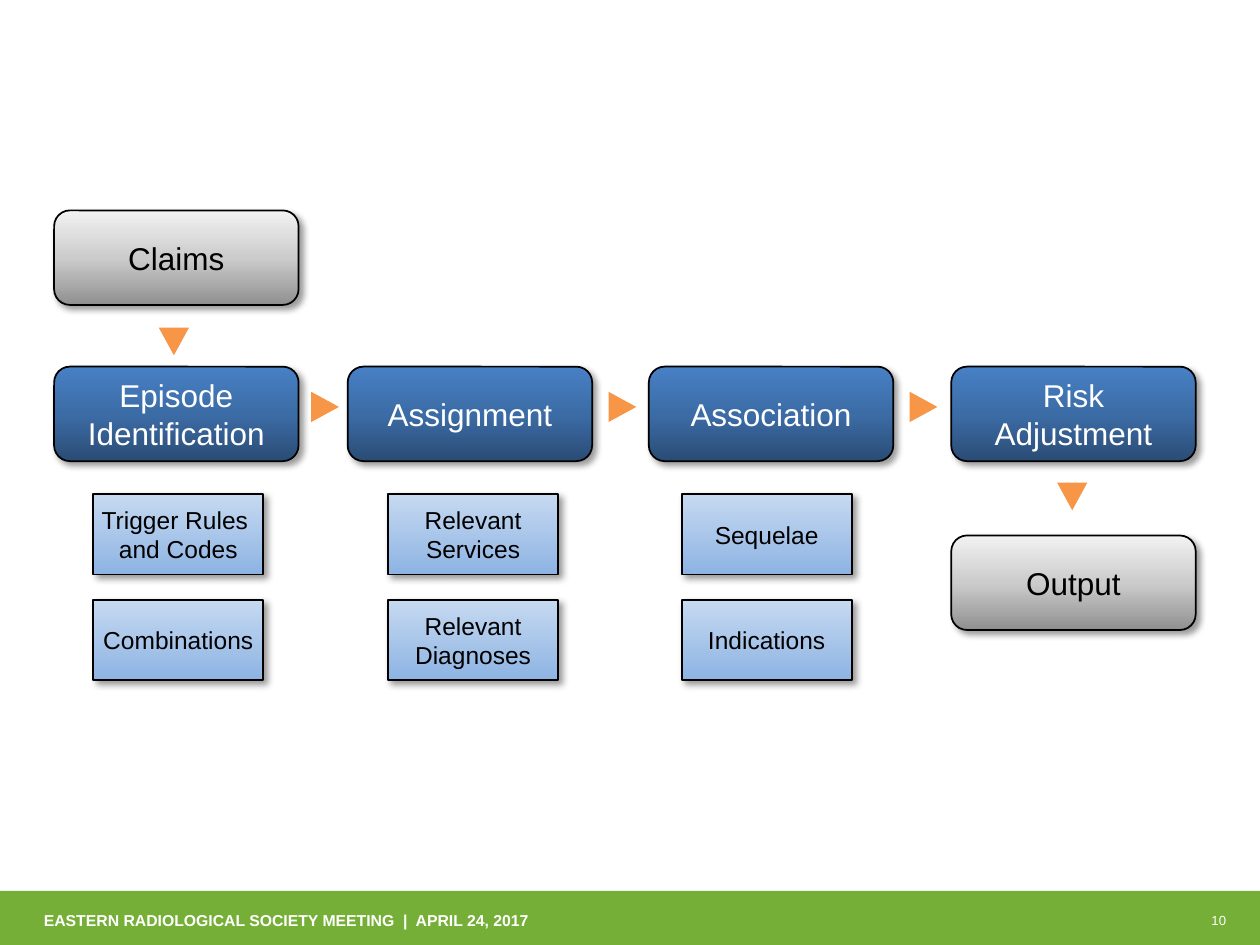
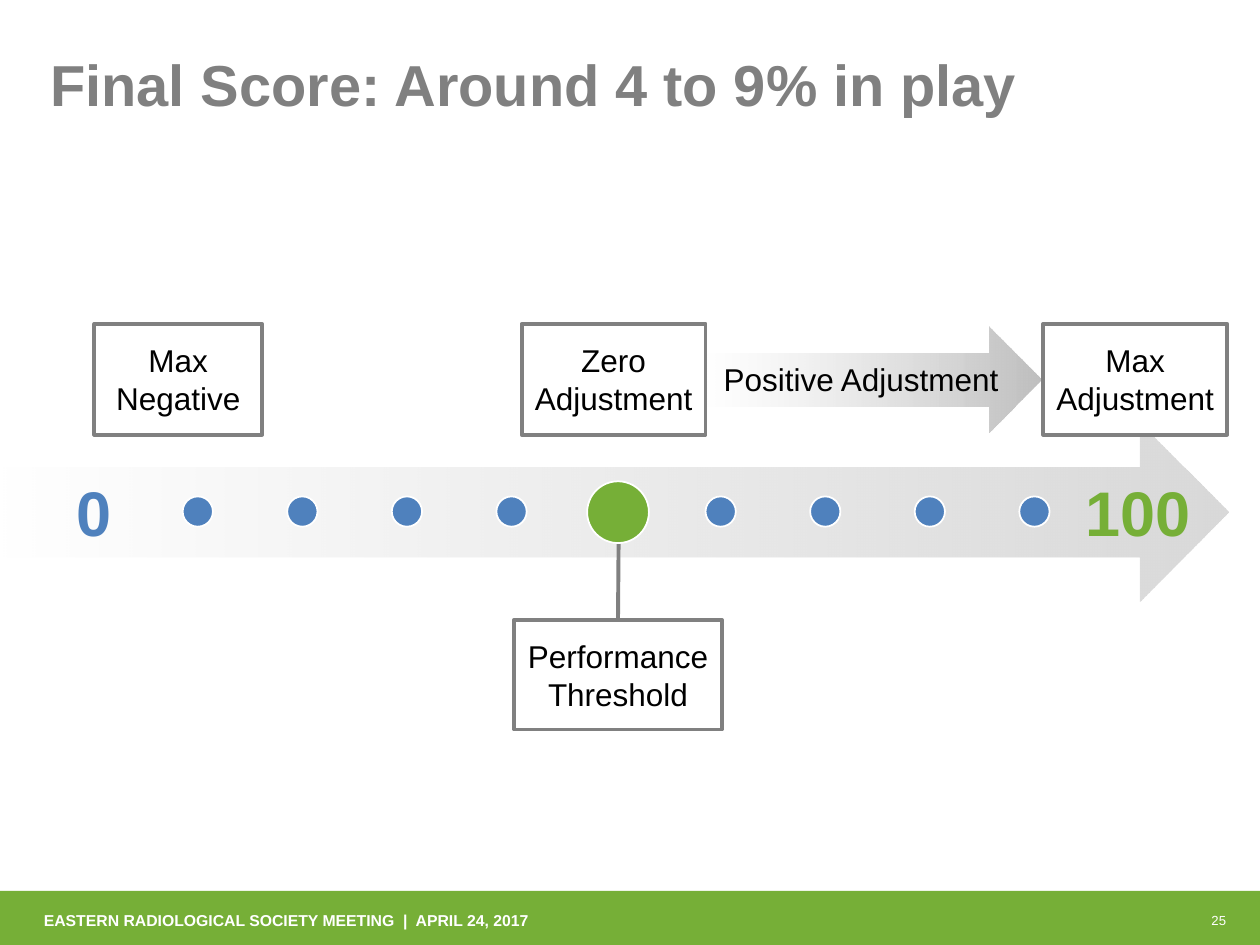
import pptx
import pptx.util
import pptx.dml.color
import pptx.enum.shapes
import pptx.enum.text
import pptx.oxml.ns
import lxml.etree

Inches = pptx.util.Inches
Pt = pptx.util.Pt
RGB = pptx.dml.color.RGBColor
SHAPE = pptx.enum.shapes.MSO_SHAPE
ALIGN = pptx.enum.text.PP_ALIGN
ANCHOR = pptx.enum.text.MSO_ANCHOR
FIT = pptx.enum.text.MSO_AUTO_SIZE
qn = pptx.oxml.ns.qn

FONT = "Arial"
WHITE = RGB(0xFF, 0xFF, 0xFF)
BLACK = RGB(0x00, 0x00, 0x00)
GREEN = RGB(0x76, 0xAF, 0x37)
GRAY = RGB(0x80, 0x80, 0x80)
BLUE = RGB(0x4F, 0x81, 0xBD)
ORANGE = RGB(0xF7, 0x96, 0x46)
PALE = RGB(0xD9, 0xD9, 0xD9)
SILVER = RGB(0xBF, 0xBF, 0xBF)

# Gradient stops: position, colour, opacity (all in percent)
STEEL = [(0, RGB(0x90, 0x90, 0x90), 100), (50, RGB(0xCC, 0xCC, 0xCC), 100),
         (100, RGB(0xF2, 0xF2, 0xF2), 100)]
NAVY = [(0, RGB(0x2A, 0x4C, 0x75), 100), (50, RGB(0x3C, 0x6C, 0xA6), 100),
        (100, RGB(0x47, 0x80, 0xC5), 100)]
SKY = [(1, RGB(0x8E, 0xB4, 0xE3), 100), (100, RGB(0xC6, 0xD9, 0xF1), 100)]
FADE = [(0, PALE, 0), (100, PALE, 100)]
RISE = [(0, PALE, 0), (100, SILVER, 100)]

STEP_W, STEP_H = 1.94, 0.75
STEP_Y = 2.91
PART_W, PART_H = 1.35, 0.64


def node(parent, tag, **attrs):
    item = lxml.etree.SubElement(parent, qn(tag))
    for name, value in attrs.items():
        item.set(name, str(value))
    return item


def tint(parent, color, alpha):
    """Add a colour with an opacity in percent."""
    node(node(parent, "a:srgbClr", val=color), "a:alpha", val=alpha * 1000)


def blend(shape, stops, angle):
    """Fill with a gradient; the angle runs counter-clockwise."""
    shape.fill.gradient()
    shape.fill.gradient_angle = angle
    rows = shape._element.spPr.find(qn("a:gradFill")).find(qn("a:gsLst"))
    for old in list(rows):
        rows.remove(old)
    for place, color, alpha in stops:
        tint(node(rows, "a:gs", pos=place * 1000), color, alpha)


def shade(shape):
    """Cast a soft shadow to the lower right."""
    effects = shape._element.spPr.find(qn("a:effectLst"))
    cast = node(effects, "a:outerShdw", blurRad=Pt(4), dist=Pt(3),
                dir=45 * 60000, algn="tl", rotWithShape=0)
    tint(cast, BLACK, 40)


def write(frame, text, size, color, bold=False, align=ALIGN.CENTER):
    """Fill a frame; "\\n" starts a paragraph and "\\v" a line."""
    for i, block in enumerate(text.split("\n")):
        para = frame.paragraphs[0] if i == 0 else frame.add_paragraph()
        para.alignment = align
        for j, line in enumerate(block.split("\v")):
            if j:
                para.add_line_break()
            run = para.add_run()
            run.text = line
            run.font.name = FONT
            run.font.size = Pt(size)
            run.font.bold = bold
            run.font.color.rgb = color


def draw(slide, kind, x, y, w, h, fill=None, line=None, weight=1):
    shape = slide.shapes.add_shape(kind, Inches(x), Inches(y), Inches(w), Inches(h))
    shape.shadow.inherit = False
    if fill is not None:
        shape.fill.solid()
        shape.fill.fore_color.rgb = fill
    if line is None:
        shape.line.fill.background()
    else:
        shape.line.color.rgb = line
        shape.line.width = Pt(weight)
    shape.text_frame.vertical_anchor = ANCHOR.MIDDLE
    return shape


def label(slide, text, x, y, w, h, size, color, bold=False,
          align=ALIGN.CENTER, anchor=ANCHOR.MIDDLE, wrap=True):
    frame = slide.shapes.add_textbox(
        Inches(x), Inches(y), Inches(w), Inches(h)).text_frame
    frame.word_wrap = wrap
    frame.vertical_anchor = anchor
    write(frame, text, size, color, bold, align)


def step(slide, text, x, y, stops, color):
    box = draw(slide, SHAPE.ROUNDED_RECTANGLE, x, y, STEP_W, STEP_H, line=BLACK)
    blend(box, stops, 90)
    shade(box)
    write(box.text_frame, text, 18, color)


def part(slide, text, x, y):
    box = draw(slide, SHAPE.RECTANGLE, x, y, PART_W, PART_H, line=BLACK)
    blend(box, SKY, 90)
    shade(box)
    box.text_frame.margin_left = box.text_frame.margin_right = 0
    write(box.text_frame, text, 14, BLACK)


def wedge(slide, x, y, turn):
    draw(slide, SHAPE.ISOSCELES_TRIANGLE, x, y, 0.24, 0.22, ORANGE).rotation = turn


def frame(slide, text, x, y, w, h=0.88):
    box = draw(slide, SHAPE.RECTANGLE, x, y, w, h, WHITE, GRAY, 2.25)
    write(box.text_frame, text, 18, BLACK)
    return box


def arrow(slide, x, y, w, h, stops):
    shape = draw(slide, SHAPE.RIGHT_ARROW, x, y, w, h)
    blend(shape, stops, 0)
    return shape


def dot(slide, x, y, size, color):
    draw(slide, SHAPE.OVAL, x, y, size, size, color, WHITE)


def title(slide, text):
    head = slide.shapes.title
    head.left, head.top = Inches(0.3), Inches(0)
    head.width, head.height = Inches(9.7), Inches(1.4)
    head.text_frame.auto_size = FIT.NONE
    head.text_frame.vertical_anchor = ANCHOR.MIDDLE
    write(head.text_frame, text, 33, GRAY, True, ALIGN.LEFT)
    head.text_frame.paragraphs[0].line_spacing = 0.9


def footer(slide, number):
    draw(slide, SHAPE.RECTANGLE, 0, 7.07, 10, 0.43, GREEN)
    label(slide, "EASTERN RADIOLOGICAL SOCIETY MEETING  |  APRIL 24, 2017",
          0.25, 7.1, 8.67, 0.4, 9, WHITE, True, ALIGN.LEFT)
    label(slide, number, 8.48, 7.1, 1.35, 0.4, 7.5, WHITE, align=ALIGN.RIGHT)


def flow(deck):
    slide = deck.slides.add_slide(deck.slide_layouts[6])
    footer(slide, "10")
    steps = [("Episode Identification", 0.43), ("Assignment", 2.76),
             ("Association", 5.15), ("Risk Adjustment", 7.55)]
    step(slide, "Claims", 0.43, 1.67, STEEL, BLACK)
    for text, x in steps:
        step(slide, text, x, STEP_Y, NAVY, WHITE)
    step(slide, "Output", 7.55, 4.25, STEEL, BLACK)

    parts = [(0.74, ["Trigger Rules \vand Codes", "Combinations"]),
             (3.08, ["Relevant\vServices", "Relevant\vDiagnoses"]),
             (5.41, ["Sequelae", "Indications"])]
    for x, texts in parts:
        for row, text in enumerate(texts):
            part(slide, text, x, 3.92 + 0.84 * row)

    for x in (2.46, 4.82, 7.21):
        wedge(slide, x, 3.12, 90)
    for x, y in ((1.26, 2.6), (8.39, 3.83)):
        wedge(slide, x, y, 180)


def score(deck):
    slide = deck.slides.add_slide(deck.slide_layouts[5])
    title(slide, "Final Score: Around 4 to 9% in play")
    footer(slide, "25")
    arrow(slide, 0, 3.35, 9.75, 1.42, FADE)
    for text, x, w, color in (("100", 8.51, 1.04, GREEN), ("0", 0.51, 0.48, BLUE)):
        label(slide, text, x, 3.71, w, 0.71, 36, color, True,
              anchor=ANCHOR.TOP, wrap=False)

    middle = 4
    for i in range(9):
        if i != middle:
            dot(slide, 1.45 + 0.83 * i, 3.94, 0.24, BLUE)

    goal = frame(slide, "Performance Threshold", 4.08, 4.92, 1.65, 0.87)
    stem = slide.shapes.add_connector(
        pptx.enum.shapes.MSO_CONNECTOR.STRAIGHT,
        Inches(4.91), Inches(4.26), Inches(4.91), Inches(4.92))
    stem.end_connect(goal, 0)
    stem.line.color.rgb = GRAY
    stem.line.width = Pt(2.25)
    node(stem._element.spPr, "a:effectLst")

    frame(slide, "Max\nNegative", 0.75, 2.57, 1.33)
    gain = arrow(slide, 5.61, 2.59, 2.66, 0.84, RISE)
    write(gain.text_frame, "Positive Adjustment", 18, BLACK)
    frame(slide, "Zero Adjustment", 4.14, 2.57, 1.46)
    frame(slide, "Max Adjustment", 8.28, 2.57, 1.46)
    dot(slide, 4.66, 3.82, 0.49, GREEN)


def main():
    deck = pptx.Presentation()
    deck.slide_width, deck.slide_height = Inches(10), Inches(7.5)
    flow(deck)
    score(deck)
    deck.save("out.pptx")


if __name__ == "__main__":
    main()
